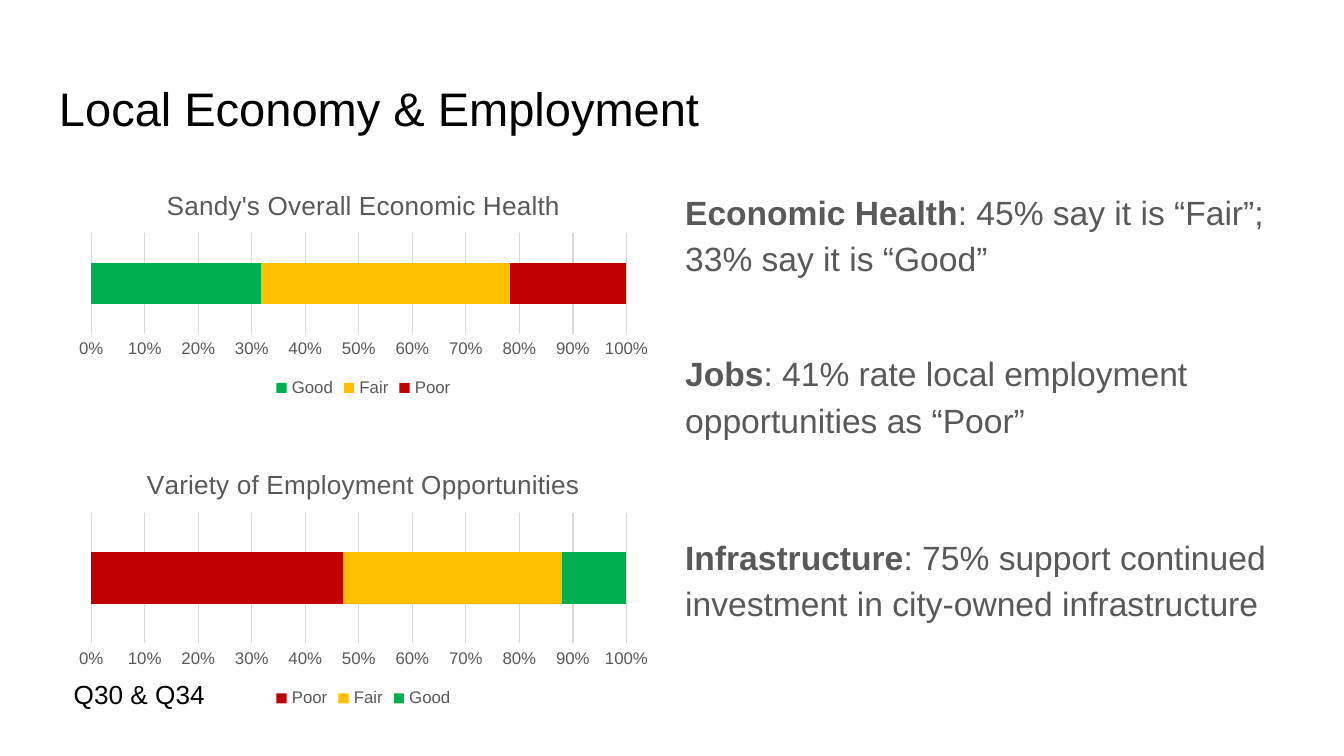
from dataclasses import dataclass
from pptx import Presentation
from pptx import util as u
from pptx.chart.data import CategoryChartData
from pptx.dml.color import RGBColor
from pptx.enum import chart as ch, text as t

WIDE = 10
HIGH = WIDE * 9 / 16
BLACK = RGBColor(0x00, 0x00, 0x00)
GREY = RGBColor(0x59, 0x59, 0x59)
PALE = RGBColor(0xD9, 0xD9, 0xD9)
TONES = {
    "Good": RGBColor(0x00, 0xB0, 0x50),
    "Fair": RGBColor(0xFF, 0xC0, 0x00),
    "Poor": RGBColor(0xC0, 0x00, 0x00),
}


@dataclass
class Poll:
    title: str
    top: float
    high: float
    votes: dict[str, int]


@dataclass
class Point:
    head: str
    rest: str
    gap: float = 0


POLLS = [
    Poll("Sandy's Overall Economic Health", 1.28, 1.72,
         {"Good": 32, "Fair": 47, "Poor": 22}),
    Poll("Variety of Employment Opportunities", 3.35, 1.96,
         {"Poor": 47, "Fair": 41, "Good": 12}),
]
POINTS = [
    Point("Economic Health", ": 45% say it is “Fair”; 33% say it is “Good”"),
    Point("Jobs", ": 41% rate local employment opportunities as “Poor”", 37),
    Point("Infrastructure",
          ": 75% support continued investment in city-owned infrastructure", 48.5),
]


def style(font, size: float, tone: RGBColor, bold: bool = False) -> None:
    """Set the look of a font."""
    font.name, font.size, font.bold = "Arial", u.Pt(size), bold
    font.color.rgb = tone


def write(slide, points: list[Point], box: tuple, size: float, tone: RGBColor,
          line: float = 1, pad: float = 0.1, anchor=t.MSO_ANCHOR.TOP) -> None:
    """Write paragraphs with a bold head and a plain rest."""
    frame = slide.shapes.add_textbox(*map(u.Inches, box)).text_frame
    frame.word_wrap, frame.vertical_anchor = True, anchor
    frame.margin_top = frame.margin_bottom = u.Inches(pad)
    for i, point in enumerate(points):
        para = frame.add_paragraph() if i else frame.paragraphs[0]
        para.line_spacing = line
        if point.gap:
            para.space_before = u.Pt(point.gap)
        for words, bold in ((point.head, True), (point.rest, False)):
            if words:
                run = para.add_run()
                run.text = words
                style(run.font, size, tone, bold)


def draw(slide, poll: Poll) -> None:
    """Draw one poll as a full-width stacked bar."""
    data = CategoryChartData()
    data.categories = ["1"]
    for name, vote in poll.votes.items():
        data.add_series(name, [vote])
    box = map(u.Inches, (0.5, poll.top, 4.41, poll.high))
    chart = slide.shapes.add_chart(
        ch.XL_CHART_TYPE.BAR_STACKED_100, *box, data).chart
    style(chart.font, 10, BLACK)
    chart.has_title = True
    chart.chart_title.include_in_layout = False
    run = chart.chart_title.text_frame.paragraphs[0].add_run()
    run.text = poll.title
    style(run.font, 14, GREY)
    chart.has_legend = True
    chart.legend.position = ch.XL_LEGEND_POSITION.BOTTOM
    chart.legend.include_in_layout = False
    style(chart.legend.font, 9, GREY)
    chart.category_axis.visible = False
    axis = chart.value_axis
    axis.major_tick_mark = axis.minor_tick_mark = ch.XL_TICK_MARK.NONE
    axis.minimum_scale, axis.maximum_scale, axis.major_unit = 0, 1, 0.1
    axis.format.line.fill.background()
    grid = axis.major_gridlines.format.line
    grid.color.rgb, grid.width = PALE, u.Pt(0.75)
    labels = axis.tick_labels
    labels.number_format, labels.number_format_is_linked = "0%", False
    style(labels.font, 9, GREY)
    plot = chart.plots[0]
    plot.gap_width, plot.overlap, plot.vary_by_categories = 150, 100, False
    for bar in plot.series:
        bar.format.fill.solid()
        bar.format.fill.fore_color.rgb = TONES[bar.name]


def main() -> None:
    """Build and save the slide."""
    deck = Presentation()
    deck.slide_width, deck.slide_height = u.Inches(WIDE), u.Inches(HIGH)
    slide = deck.slides.add_slide(deck.slide_layouts[6])
    write(slide, [Point("", "Local Economy & Employment")],
          (0.34, 0.49, 9.32, 0.63), 25.2, BLACK, anchor=t.MSO_ANCHOR.MIDDLE)
    write(slide, POINTS, (5, 1.28, 4.66, 3.74), 18, GREY, line=1.15)
    for poll in POLLS:
        draw(slide, poll)
    write(slide, [Point("", "Q30 & Q34")], (0.45, 5, 1.98, 0.34), 14, BLACK,
          pad=0.05)
    deck.save("out.pptx")


if __name__ == "__main__":
    main()
